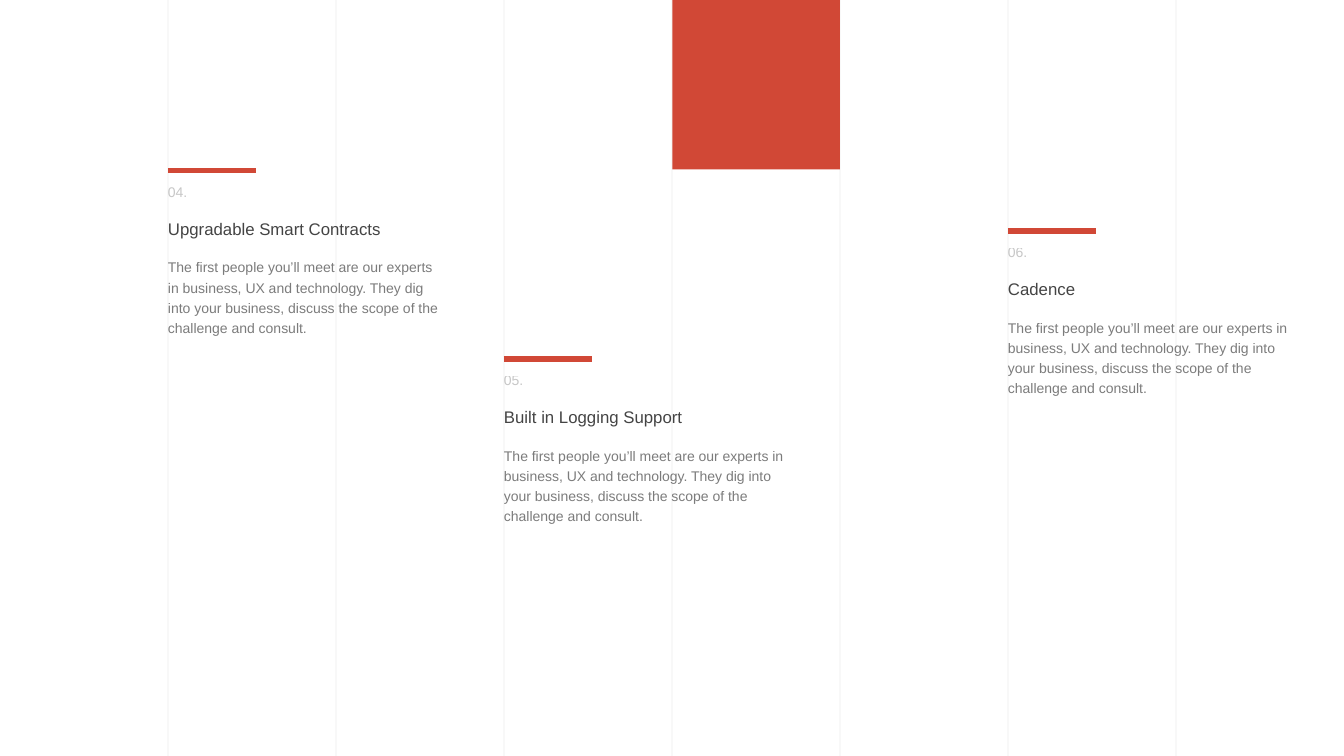
from lxml import etree
from pptx import Presentation
from pptx.dml.color import RGBColor
from pptx.enum import shapes, text
from pptx.oxml import ns
from pptx.util import Inches, Pt

RED, GREY, FONT = "D14836", "444444", "Arial"
WIDTH, HEIGHT, COLUMNS = 13.33, 7.5, 8
BODY = ("The first people you’ll meet are our experts in business, UX and technology. "
        "They dig into your business, discuss the scope of the challenge and consult.")
FEATURES = [
    {"number": "04.", "title": "Upgradable Smart Contracts", "column": 1, "top": 1.69, "width": 2.73},
    {"number": "05.", "title": "Built in Logging Support", "column": 3, "top": 3.56, "width": 2.93},
    {"number": "06.", "title": "Cadence", "column": 6, "top": 2.29, "width": 2.93},
]
BAR_LENGTH, NUMBER_DROP, TEXT_DROP = 0.87, 0.13, 0.44


def paint(color, value):
    color.rgb = RGBColor.from_string(value)


def fade(element, opacity):
    for color in element.xpath(".//a:srgbClr"):
        etree.SubElement(color, ns.qn("a:alpha")).set("val", str(opacity * 1000))


def add_line(page, start, end, color, weight, opacity=100):
    line = page.shapes.add_connector(shapes.MSO_CONNECTOR.STRAIGHT, *map(Inches, start + end))
    paint(line.line.color, color)
    line.line.width = Pt(weight)
    etree.SubElement(line._element.spPr, ns.qn("a:effectLst"))
    if opacity < 100:
        fade(line._element, opacity)


def add_box(page, left, top, width, height, wrap=True):
    box = page.shapes.add_textbox(*map(Inches, (left, top, width, height)))
    frame = box.text_frame
    frame.margin_left = frame.margin_right = frame.margin_top = frame.margin_bottom = 0
    frame.word_wrap = wrap
    frame.auto_size = text.MSO_AUTO_SIZE.SHAPE_TO_FIT_TEXT
    return frame


def write(para, words, size=10, opacity=100, spacing=None, before=None):
    para.line_spacing = spacing
    if before:
        para.space_before = Pt(before)
    span = para.add_run()
    span.text = words
    span.font.name = FONT
    span.font.size = Pt(size)
    paint(span.font.color, GREY)
    if opacity < 100:
        fade(span._r, opacity)


def add_feature(page, feature):
    left, top = feature["column"] * WIDTH / COLUMNS, feature["top"]
    add_line(page, (left, top), (left + BAR_LENGTH, top), RED, 4)
    number = add_box(page, left, top + NUMBER_DROP, 0.23, 0.17, wrap=False)
    write(number.paragraphs[0], feature["number"], opacity=30)
    story = add_box(page, left, top + TEXT_DROP, feature["width"], 1.2)
    write(story.paragraphs[0], feature["title"], size=12, spacing=1.2)
    write(story.add_paragraph(), BODY, opacity=70, spacing=1.2, before=12)


def main():
    deck = Presentation()
    deck.slide_width, deck.slide_height = Inches(WIDTH), Inches(HEIGHT)
    page = deck.slides.add_slide(deck.slide_layouts[6])
    for column in range(1, COLUMNS):
        left = column * WIDTH / COLUMNS
        add_line(page, (left, 0), (left, HEIGHT), GREY, 0.5, opacity=10)
    block = page.shapes.add_shape(
        shapes.MSO_SHAPE.RECTANGLE, Inches(6.67), 0, Inches(1.66), Inches(1.68))
    block.shadow.inherit = False
    block.fill.solid()
    paint(block.fill.fore_color, RED)
    block.line.fill.background()
    for feature in FEATURES:
        add_feature(page, feature)
    deck.save("out.pptx")


if __name__ == "__main__":
    main()
